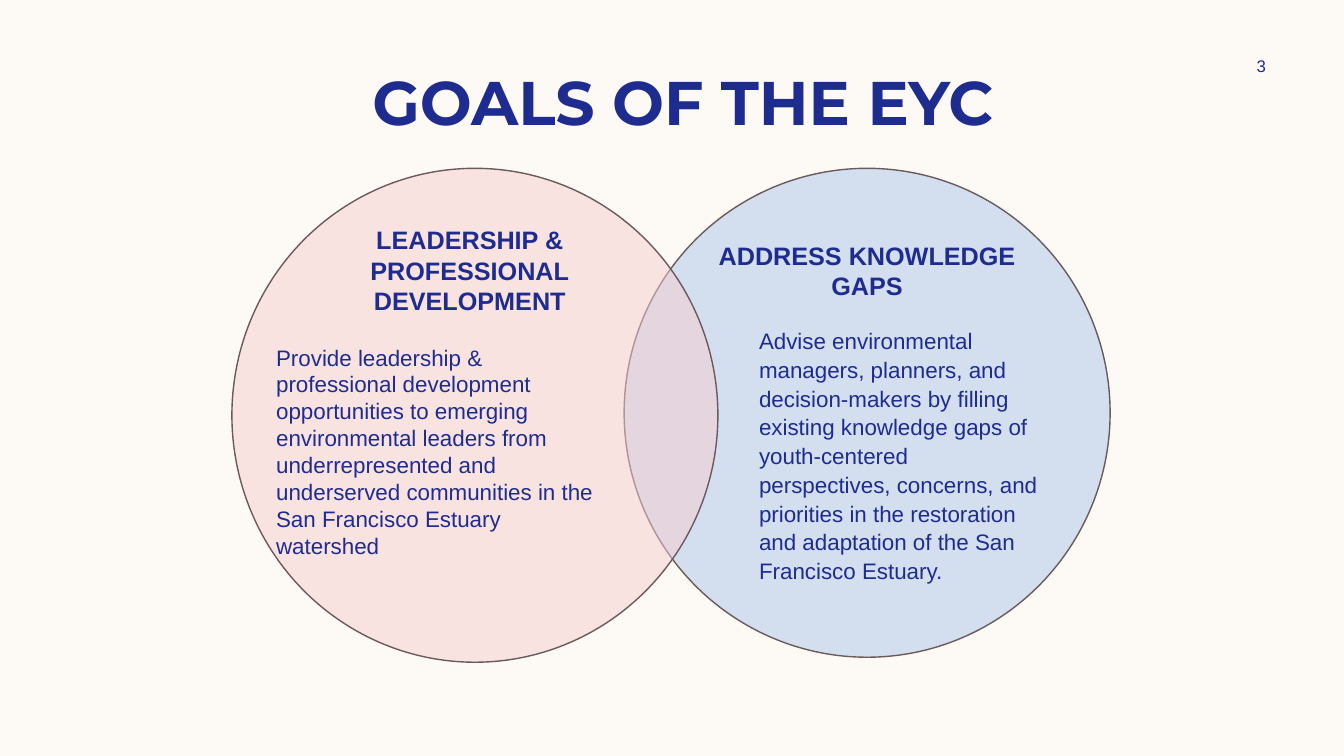
"""Build the two-circle slide on the goals of the EYC."""
import pptx
import pptx.dml.color
import pptx.enum.shapes
import pptx.enum.text
import pptx.oxml.ns
import pptx.util
from lxml import etree

Inches, Pt = pptx.util.Inches, pptx.util.Pt
RGBColor = pptx.dml.color.RGBColor
Align, Anchor = pptx.enum.text.PP_ALIGN, pptx.enum.text.MSO_ANCHOR
OVAL = pptx.enum.shapes.MSO_SHAPE.OVAL

CREAM = RGBColor(0xFD, 0xFA, 0xF6)
NAVY = RGBColor(0x1F, 0x2C, 0x8F)
BLUE = RGBColor(0xAA, 0xC4, 0xE9)
PINK = RGBColor(0xF5, 0xCD, 0xCE)
BROWN = RGBColor(0x6B, 0x5A, 0x5A)

HEAD = {"size": Pt(18), "bold": True, "name": "Arial"}
BODY = {"size": Pt(16), "bold": False, "name": "Arial"}
MID = {"alignment": Align.CENTER}


def write(box, lines, font, para, anchor=Anchor.TOP):
    frame = box.text_frame
    frame.word_wrap = True
    frame.auto_size = pptx.enum.text.MSO_AUTO_SIZE.NONE
    frame.vertical_anchor = anchor
    frame.text = "\n".join(lines)
    for item in frame.paragraphs:
        for key, val in para.items():
            setattr(item, key, val)
        run = item.runs[0]
        for key, val in font.items():
            setattr(run.font, key, val)
        run.font.color.rgb = NAVY


def place(box):
    return [Inches(n) for n in box]


deck = pptx.Presentation()
deck.slide_width, deck.slide_height = Inches(13.33), Inches(7.5)
slide = deck.slides.add_slide(deck.slide_layouts[5])
slide.background.fill.solid()
slide.background.fill.fore_color.rgb = CREAM

title = slide.shapes.title
title.left, title.top, title.width, title.height = place((0.94, 0.58, 11.67, 0.84))
write(title, ["GOALS OF THE EYC"],
      {"size": Pt(44), "bold": True, "name": "Montserrat"}, MID)

number = slide.shapes.add_textbox(*place((11.97, 0.5, 1.08, 0.3)))
write(number, ["3"], {"size": Pt(12), "name": "Arial"}, MID, Anchor.MIDDLE)

goals = [
    {
        "fill": BLUE,
        "oval": (6.19, 1.67, 4.82, 4.85),
        "head": (6.51, 2.33, 4.18, 0.45),
        "body": (7.43, 3.18, 3.04, 2.53),
        "name": ["ADDRESS KNOWLEDGE", "GAPS"],
        "text": "Advise environmental managers, planners, and decision-makers "
                "by filling existing knowledge gaps of youth-centered "
                "perspectives, concerns, and priorities in the restoration "
                "and adaptation of the San Francisco Estuary.",
        "para": {"line_spacing": 1.07, "space_after": Pt(8)},
    },
    {
        "fill": PINK,
        "oval": (2.3, 1.67, 4.82, 4.9),
        "head": (2.64, 2.18, 4.04, 0.45),
        "body": (2.64, 3.36, 3.39, 2.15),
        "name": ["LEADERSHIP & PROFESSIONAL", "DEVELOPMENT"],
        "text": "Provide leadership & professional development opportunities "
                "to emerging environmental leaders from underrepresented and "
                "underserved communities in the San Francisco Estuary watershed",
        "para": {"space_before": Pt(3.6)},
    },
]

for goal in goals:
    group = slide.shapes.add_group_shape()
    oval = group.shapes.add_shape(OVAL, *place(goal["oval"]))
    oval.shadow.inherit = False
    oval.fill.solid()
    oval.fill.fore_color.rgb = goal["fill"]
    tint = oval.fill._xPr.find(".//" + pptx.oxml.ns.qn("a:srgbClr"))
    etree.SubElement(tint, pptx.oxml.ns.qn("a:alpha"), val="50000")
    oval.line.color.rgb = BROWN
    oval.line.width = Pt(1)
    head = group.shapes.add_textbox(*place(goal["head"]))
    write(head, goal["name"], HEAD, MID)
    body = group.shapes.add_textbox(*place(goal["body"]))
    write(body, [goal["text"]], BODY, {"alignment": Align.LEFT, **goal["para"]})

deck.save("out.pptx")
